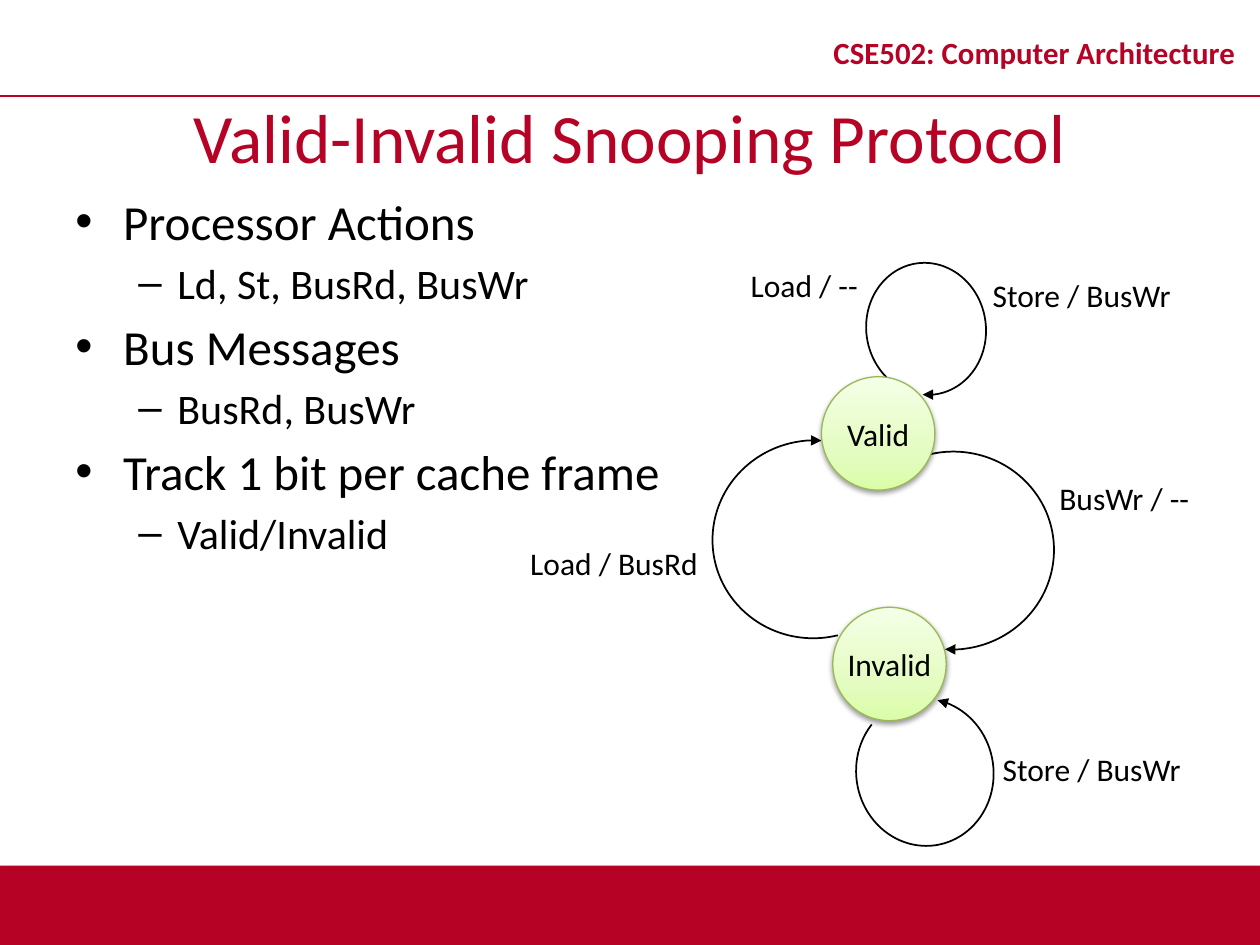
from copy import deepcopy
from dataclasses import dataclass

from lxml import etree
from pptx import Presentation
from pptx.dml.color import RGBColor
from pptx.enum.shapes import MSO_CONNECTOR, MSO_SHAPE
from pptx.enum.text import MSO_ANCHOR, MSO_AUTO_SIZE, PP_ALIGN
from pptx.oxml.ns import qn
from pptx.util import Inches, Pt

RED = RGBColor(0xB6, 0x02, 0x25)
BLACK = RGBColor(0x00, 0x00, 0x00)
STATE_EDGE = RGBColor(0x98, 0xB9, 0x55)
STATE_GRADIENT = (
    (0, RGBColor(0xDA, 0xFD, 0xA7)),
    (0.35, RGBColor(0xE4, 0xFC, 0xC2)),
    (1, RGBColor(0xF5, 0xFF, 0xE7)),
)
FONT = "Calibri"
CENTER, LEFT = PP_ALIGN.CENTER, PP_ALIGN.LEFT
TOP, MIDDLE = MSO_ANCHOR.TOP, MSO_ANCHOR.MIDDLE
FIT_SHAPE = MSO_AUTO_SIZE.SHAPE_TO_FIT_TEXT
RECTANGLE, OVAL, ARC = MSO_SHAPE.RECTANGLE, MSO_SHAPE.OVAL, MSO_SHAPE.ARC
STRAIGHT = MSO_CONNECTOR.STRAIGHT

# The slide is a grid of 100 columns by 75 rows of square cells
COLUMNS, ROWS = 100, 75
HEADER_ROW, TITLE_ROWS = 7.6, 6.3
FOOTER_ROW = 68.7
STATE_SIZE = 9


@dataclass(frozen=True)
class State:
    name: str
    column: float
    row: float


@dataclass(frozen=True)
class Transition:
    """An elliptical arc about a centre; angles run clockwise in degrees."""
    column: float
    row: float
    width: float
    height: float
    rotation: int
    start: float
    end: float
    arrow: str = "a:tailEnd"


@dataclass(frozen=True)
class Label:
    text: str
    column: float
    row: float
    width: float
    height: float = 5


@dataclass(frozen=True)
class BulletLevel:
    mark: str
    size: int
    margin: float
    hanging: float
    space_before: int


STATES = (State("Valid", 65.2, 29.9), State("Invalid", 66.1, 48.2))
TRANSITIONS = (
    Transition(73.5, 26.1, 10.5, 9.5, 82, 45, 11),
    Transition(75.6, 43.7, 15.7, 16.1, 82, 174, 12.4),
    Transition(64.6, 42.8, 15.7, 16.1, 262, 174, 12.4),
    Transition(73.4, 61.3, 11.7, 10.9, 82, 198, 140, "a:headEnd"),
)
LABELS = (
    Label("Store / BusWr", 77.8, 21.4, 21),
    Label("BusWr / --", 83.1, 37.5, 12.4, 4),
    Label("Store / BusWr", 78.6, 59, 21),
    Label("Load / BusRd", 41.1, 42.7, 19.9),
    Label("Load / --", 58.6, 20.6, 13.4),
)
LEVELS = (BulletLevel("•", 28, 3.8, 3.8, 5), BulletLevel("–", 24, 8.1, 3.1, 4))
BULLETS = (
    (0, "Processor Actions"), (1, "Ld, St, BusRd, BusWr"),
    (0, "Bus Messages"), (1, "BusRd, BusWr"),
    (0, "Track 1 bit per cache frame"), (1, "Valid/Invalid"),
)


def cells(count: float) -> int:
    return Inches(count / 10)


def box(*counts: float) -> list[int]:
    return [cells(count) for count in counts]


def add_run(paragraph, text: str, size: float, color=BLACK, bold=False) -> None:
    run = paragraph.add_run()
    run.text = text
    run.font.name, run.font.size, run.font.bold = FONT, Pt(size), bold
    run.font.color.rgb = color


def add_text(slide, bounds, text: str, size: float, color=BLACK, bold=False,
             align=CENTER, anchor=MIDDLE, wrap=True):
    shape = slide.shapes.add_textbox(*box(*bounds))
    frame = shape.text_frame
    frame.word_wrap, frame.vertical_anchor = wrap, anchor
    paragraph = frame.paragraphs[0]
    paragraph.alignment = align
    add_run(paragraph, text, size, color, bold)
    return shape


def add_shadow(shape, distance: float, opacity: int) -> None:
    shape.shadow.inherit = False
    effects = shape._element.spPr.find(qn("a:effectLst"))
    shadow = etree.SubElement(effects, qn("a:outerShdw"), blurRad=str(Pt(3.1)),
                              dist=str(Pt(distance)), dir="5400000", rotWithShape="0")
    color = etree.SubElement(shadow, qn("a:srgbClr"), val="000000")
    etree.SubElement(color, qn("a:alpha"), val=str(opacity * 1000))


def add_bullets(slide) -> None:
    frame = slide.shapes.add_textbox(*box(5, 14.7, 90, 53.5)).text_frame
    frame.word_wrap = True
    for index, (depth, text) in enumerate(BULLETS):
        level = LEVELS[depth]
        paragraph = frame.add_paragraph() if index else frame.paragraphs[0]
        paragraph.level = depth
        if index:
            paragraph.space_before = Pt(level.space_before)
        properties = paragraph._p.get_or_add_pPr()
        properties.set("marL", str(cells(level.margin)))
        properties.set("indent", str(-cells(level.hanging)))
        etree.SubElement(properties, qn("a:buFont"), typeface="Arial")
        etree.SubElement(properties, qn("a:buChar"), char=level.mark)
        add_run(paragraph, text, level.size)


def add_transition(slide, arc: Transition) -> None:
    shape = slide.shapes.add_shape(ARC, *box(
        arc.column - arc.width / 2, arc.row - arc.height / 2, arc.width, arc.height))
    shape.rotation = arc.rotation
    # Adjustments count 100000ths, angles 60000ths of a degree
    for index, angle in enumerate((arc.start, arc.end)):
        shape.adjustments[index] = angle * 0.6
    shape.shadow.inherit = False
    shape.fill.background()
    shape.line.color.rgb, shape.line.width = BLACK, Pt(1)
    etree.SubElement(shape.line._get_or_add_ln(), qn(arc.arrow), type="triangle")


def add_state(slide, state: State) -> None:
    shape = slide.shapes.add_shape(
        OVAL, *box(state.column, state.row, STATE_SIZE, STATE_SIZE))
    shape.fill.gradient()
    shape.fill.gradient_angle = 90
    stop_list = shape._element.spPr.find(".//" + qn("a:gsLst"))
    stop_list.append(deepcopy(stop_list[-1]))
    for stop, (position, color) in zip(shape.fill.gradient_stops, STATE_GRADIENT):
        stop.position, stop.color.rgb = position, color
    shape.line.color.rgb, shape.line.width = STATE_EDGE, Pt(0.75)
    add_shadow(shape, 1.6, 38)
    frame = shape.text_frame
    frame.word_wrap, frame.vertical_anchor = False, MIDDLE
    frame.paragraphs[0].alignment = CENTER
    add_run(frame.paragraphs[0], state.name, 18)


def add_page_furniture(slide) -> None:
    footer = slide.shapes.add_shape(
        RECTANGLE, *box(0, FOOTER_ROW, COLUMNS, ROWS - FOOTER_ROW))
    footer.fill.solid()
    footer.fill.fore_color.rgb = RED
    footer.line.fill.background()
    add_shadow(footer, 1.8, 35)
    rule = slide.shapes.add_connector(
        STRAIGHT, *box(0, HEADER_ROW, COLUMNS, HEADER_ROW))
    rule.line.color.rgb, rule.line.width = RED, Pt(1)
    etree.SubElement(rule._element.spPr, qn("a:effectLst"))
    course = add_text(slide, (64.2, 1.3, 35.8, TITLE_ROWS),
                      "CSE502: Computer Architecture", 17.6, RED, bold=True)
    course.text_frame.paragraphs[0].line_spacing = 0.8


def main() -> None:
    presentation = Presentation()
    presentation.slide_width, presentation.slide_height = box(COLUMNS, ROWS)
    slide = presentation.slides.add_slide(presentation.slide_layouts[6])
    add_page_furniture(slide)
    add_text(slide, (0, HEADER_ROW, COLUMNS, TITLE_ROWS),
             "Valid-Invalid Snooping Protocol", 39.6, RED)
    add_bullets(slide)
    # State diagram
    for transition in TRANSITIONS:
        add_transition(slide, transition)
    for label in LABELS:
        shape = add_text(slide, (label.column, label.row, label.width, label.height),
                         label.text, 18, align=LEFT, anchor=TOP, wrap=False)
        shape.text_frame.auto_size = FIT_SHAPE
    for state in STATES:
        add_state(slide, state)
    presentation.save("out.pptx")


if __name__ == "__main__":
    main()
